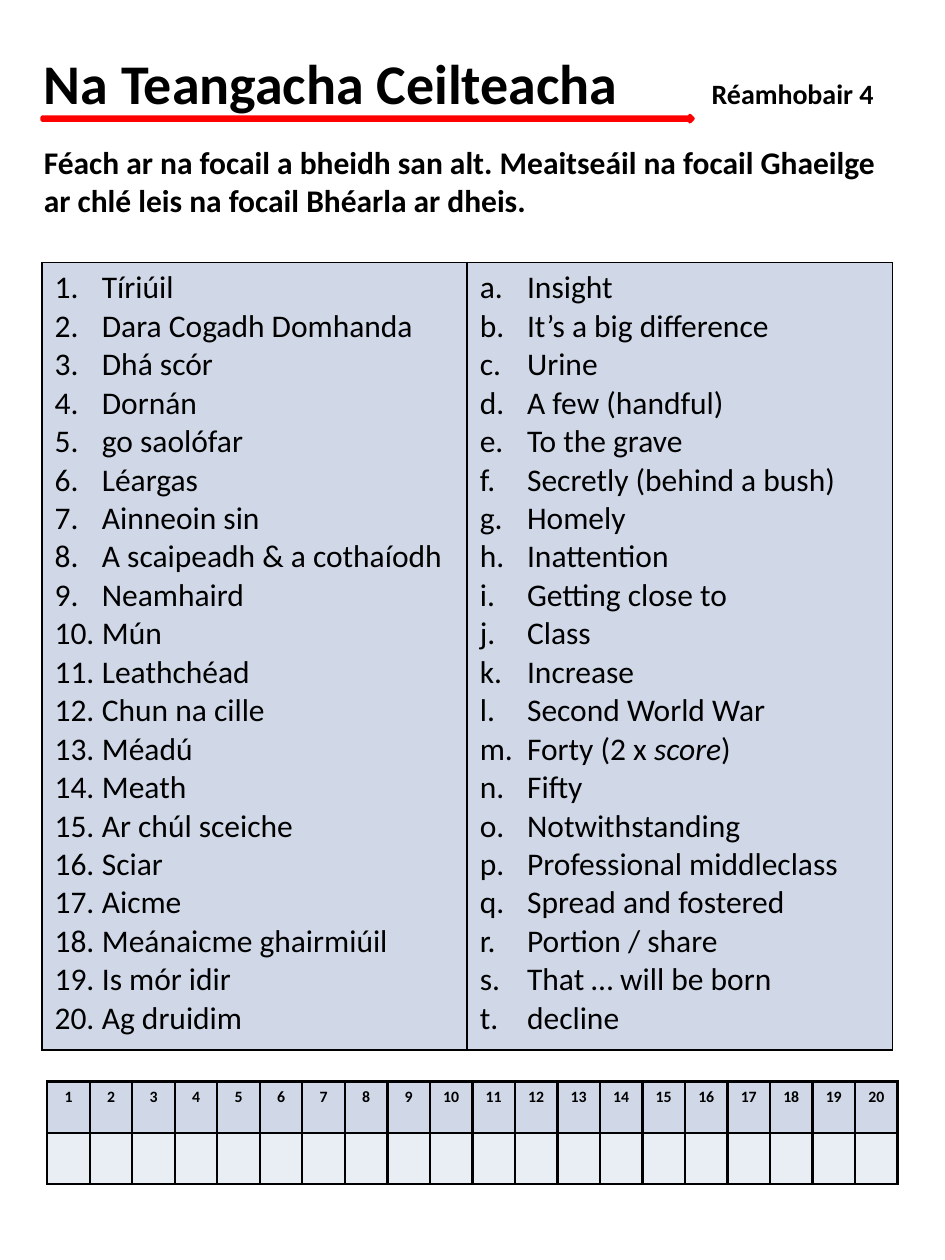
import pptx
import pptx.dml.color
import pptx.enum.shapes
import pptx.enum.text
import pptx.oxml
import pptx.oxml.ns
import pptx.util

Pt = pptx.util.Pt
RGBColor = pptx.dml.color.RGBColor

BLACK = RGBColor(0x00, 0x00, 0x00)
RED = RGBColor(0xFF, 0x00, 0x00)
BLUE = RGBColor(0xD0, 0xD8, 0xE8)
PALE = RGBColor(0xE9, 0xED, 0xF4)

IRISH = [
    "Tíriúil", "Dara Cogadh Domhanda", "Dhá scór", "Dornán", "go saolófar",
    "Léargas", "Ainneoin sin", "A scaipeadh & a cothaíodh", "Neamhaird", "Mún",
    "Leathchéad", "Chun na cille", "Méadú", "Meath", "Ar chúl sceiche",
    "Sciar", "Aicme", "Meánaicme ghairmiúil", "Is mór idir", "Ag druidim",
]
ENGLISH = [
    "Insight", "It’s a big difference", "Urine", "A few (handful)", "To the grave",
    "Secretly (behind a bush)", "Homely", "Inattention", "Getting close to", "Class",
    "Increase", "Second World War", "Forty (2 x *score*)", "Fifty", "Notwithstanding",
    "Professional middleclass", "Spread and fostered", "Portion / share",
    "That … will be born", "decline",
]


def add_xml(parent, tag, content="", **attributes):
    listed = "".join(f' {name}="{value}"' for name, value in attributes.items())
    namespace = pptx.oxml.ns.nsdecls("a")
    parent.append(pptx.oxml.parse_xml(f"<a:{tag} {namespace}{listed}>{content}</a:{tag}>"))


class Worksheet:
    font_name = "Calibri"

    def __init__(self, page):
        self.page = page

    def style(self, para, size, bold=False):
        para.font.name = self.font_name
        para.font.size = Pt(size)
        para.font.bold = bold
        para.font.color.rgb = BLACK

    def text(self, left, top, width, height, parts, size, tab=None):
        box = self.page.shapes.add_textbox(Pt(left), Pt(top), Pt(width), Pt(height))
        box.text_frame.word_wrap = True
        para = box.text_frame.paragraphs[0]
        if tab:
            stop = f'<a:tab pos="{Pt(tab)}" algn="l"/>'
            add_xml(para._p.get_or_add_pPr(), "tabLst", stop)
        self.style(para, size, bold=True)
        for words, span_size in parts:
            span = para.add_run()
            span.text = words
            if span_size != size:
                span.font.size = Pt(span_size)

    def arrow(self, left, top, width, height):
        kind = pptx.enum.shapes.MSO_SHAPE.RIGHT_ARROW
        shape = self.page.shapes.add_shape(kind, Pt(left), Pt(top), Pt(width), Pt(height))
        shape.shadow.inherit = False
        shape.fill.solid()
        shape.fill.fore_color.rgb = RED
        shape.line.color.rgb = RED
        shape.line.width = Pt(2)

    def table(self, left, top, width, height, rows, columns, border, fills):
        frame = self.page.shapes.add_table(
            rows, columns, Pt(left), Pt(top), Pt(width), Pt(height))
        table = frame.table
        table.first_row = False
        table.horz_banding = False
        for column in table.columns:
            column.width = Pt(width / columns)
        for row, fill in zip(table.rows, fills):
            for cell in row.cells:
                self.cell(cell, border, fill)
        return table

    def cell(self, cell, border, fill):
        properties = cell._tc.get_or_add_tcPr()
        paint = f'<a:solidFill><a:srgbClr val="{BLACK}"/></a:solidFill>'
        for side in "LRTB":
            add_xml(properties, f"ln{side}", paint, w=Pt(border))
        cell.fill.solid()
        cell.fill.fore_color.rgb = fill

    def numbered_list(self, cell, items, numbering, indent=27):
        frame = cell.text_frame
        for index, item in enumerate(items):
            para = frame.add_paragraph() if index else frame.paragraphs[0]
            properties = para._p.get_or_add_pPr()
            properties.set("marL", str(Pt(indent)))
            properties.set("indent", str(Pt(-indent)))
            add_xml(properties, "buFont", typeface=self.font_name)
            add_xml(properties, "buAutoNum", type=numbering)
            self.style(para, 18)
            for position, words in enumerate(item.split("*")):
                span = para.add_run()
                span.text = words
                if position % 2:
                    span.font.italic = True

    def label(self, cell, words):
        para = cell.text_frame.paragraphs[0]
        para.text = words
        para.alignment = pptx.enum.text.PP_ALIGN.CENTER
        self.style(para, 9, bold=True)


def main():
    deck = pptx.Presentation()
    deck.slide_width = Pt(540)
    deck.slide_height = Pt(720)
    sheet = Worksheet(deck.slides.add_slide(deck.slide_layouts[6]))

    sheet.arrow(24, 66, 372, 3.6)
    sheet.text(18, 24, 492, 46,
               [("Na Teangacha Ceilteacha\t", 32), ("Réamhobair 4", 16)], 32, tab=381.6)
    sheet.text(18, 78, 504, 72.7,
               [("Féach ar na focail a bheidh san alt. Meaitseáil na focail Ghaeilge "
                 "ar chlé leis na focail Bhéarla ar dheis.", 18)], 18)

    words = sheet.table(24, 150, 486, 450, 1, 2, 1, [BLUE])
    sheet.numbered_list(words.cell(0, 0), IRISH, "arabicPeriod")
    sheet.numbered_list(words.cell(0, 1), ENGLISH, "alphaLcPeriod")

    answers = sheet.table(27, 618, 486, 58.5, 2, len(IRISH), 1.5, [BLUE, PALE])
    for column in range(len(IRISH)):
        sheet.label(answers.cell(0, column), str(column + 1))

    deck.save("out.pptx")


if __name__ == "__main__":
    main()
